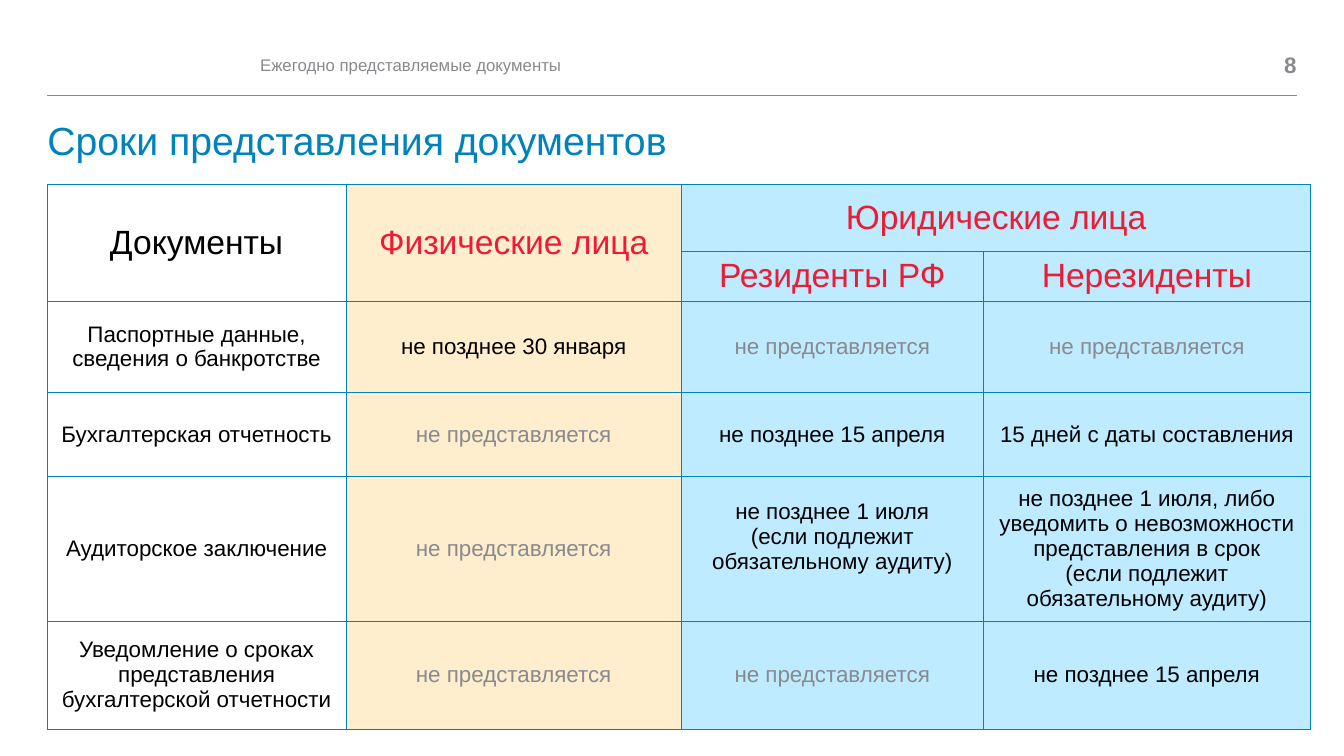
from lxml import etree
from pptx import Presentation
from pptx.dml.color import RGBColor
from pptx.enum.shapes import MSO_CONNECTOR
from pptx.enum.text import MSO_ANCHOR as ANCHOR, PP_ALIGN as ALIGN
from pptx.oxml.ns import qn
from pptx.util import Inches, Pt

FONT = "Arial"
BLUE = RGBColor(0x00, 0x82, 0xBB)
GREY = RGBColor(0x88, 0x8A, 0x8D)
RED = RGBColor(0xED, 0x1B, 0x34)
BLACK = RGBColor(0x00, 0x00, 0x00)
CREAM = RGBColor(0xFF, 0xEE, 0xCE)
SKY = RGBColor(0xBE, 0xEB, 0xFF)

COL_WIDTHS = [2.96, 3.33, 2.99, 3.25]
ROW_HEIGHTS = [0.66, 0.45, 0.9, 0.84, 1.3, 1.07]
COL_FILLS = [None, CREAM, SKY, SKY]
HEADER_ROWS = 2

NOT_REQUIRED = "не представляется"
IF_AUDITED = "(если подлежит обязательному аудиту)"
# A line break inside a cell starts a new paragraph
DEADLINES = [
    ["Документы", "Физические лица", "Юридические лица", ""],
    ["", "", "Резиденты РФ", "Нерезиденты"],
    ["Паспортные данные, сведения о банкротстве", "не позднее 30 января",
     NOT_REQUIRED, NOT_REQUIRED],
    ["Бухгалтерская отчетность", NOT_REQUIRED,
     "не позднее 15 апреля", "15 дней с даты составления"],
    ["Аудиторское заключение", NOT_REQUIRED,
     f"не позднее 1 июля\n{IF_AUDITED}",
     "не позднее 1 июля, либо уведомить о невозможности "
     f"представления в срок\n{IF_AUDITED}"],
    ["Уведомление о сроках представления бухгалтерской отчетности",
     NOT_REQUIRED, NOT_REQUIRED, "не позднее 15 апреля"],
]


def add_run(p, text, size, color, bold=False):
    r = p.add_run()
    r.text = text
    r.font.name = FONT
    r.font.size = Pt(size)
    r.font.bold = bold
    r.font.color.rgb = color


def add_text(slide, box, text, size, color, bold=False, align=ALIGN.LEFT,
             anchor=ANCHOR.MIDDLE, spacing=1.0):
    tf = slide.shapes.add_textbox(*map(Inches, box)).text_frame
    tf.word_wrap = True
    tf.vertical_anchor = anchor
    tf.margin_left = tf.margin_right = tf.margin_top = tf.margin_bottom = 0
    p = tf.paragraphs[0]
    p.alignment = align
    p.line_spacing = spacing
    add_run(p, text, size, color, bold)


def add_rule(slide, x1, x2, y):
    line = slide.shapes.add_connector(
        MSO_CONNECTOR.STRAIGHT, Inches(x1), Inches(y), Inches(x2), Inches(y))
    line.line.color.rgb = GREY
    line.line.width = Pt(0.5)
    etree.SubElement(line._element.spPr, qn("a:effectLst"))


def set_borders(cell, color, width):
    tc_pr = cell._tc.get_or_add_tcPr()
    for side in ("a:lnL", "a:lnR", "a:lnT", "a:lnB"):
        ln = etree.SubElement(tc_pr, qn(side), w=str(Pt(width)))
        fill = etree.SubElement(ln, qn("a:solidFill"))
        etree.SubElement(fill, qn("a:srgbClr"), val=str(color))


def fill_cell(cell, text, row, col):
    set_borders(cell, BLUE, 0.5)
    if COL_FILLS[col] is None:
        cell.fill.background()
    else:
        cell.fill.solid()
        cell.fill.fore_color.rgb = COL_FILLS[col]
    cell.vertical_anchor = ANCHOR.MIDDLE
    if col < 2:
        cell.margin_left = cell.margin_right = 0
        cell.margin_top = cell.margin_bottom = 0
    if not text:
        return
    header = row < HEADER_ROWS
    if header:
        color = RED if col else BLACK
    else:
        color = GREY if text == NOT_REQUIRED else BLACK
    tf = cell.text_frame
    for i, line in enumerate(text.split("\n")):
        p = tf.add_paragraph() if i else tf.paragraphs[0]
        p.alignment = ALIGN.CENTER
        add_run(p, line, 24 if header else 16, color)


def add_deadlines(slide, left, top):
    table = slide.shapes.add_table(
        len(ROW_HEIGHTS), len(COL_WIDTHS), Inches(left), Inches(top),
        Inches(sum(COL_WIDTHS)), Inches(sum(ROW_HEIGHTS))).table
    table.first_row = table.horz_banding = False
    for column, width in zip(table.columns, COL_WIDTHS):
        column.width = Inches(width)
    for row, height in zip(table.rows, ROW_HEIGHTS):
        row.height = Inches(height)
    for i, texts in enumerate(DEADLINES):
        for j, text in enumerate(texts):
            fill_cell(table.cell(i, j), text, i, j)
    # Two-level header
    table.cell(0, 0).merge(table.cell(1, 0))
    table.cell(0, 1).merge(table.cell(1, 1))
    table.cell(0, 2).merge(table.cell(0, 3))
    # The residents' audit deadline sits a little above the middle
    table.cell(4, 2).margin_bottom = Inches(0.3)


def main():
    prs = Presentation()
    prs.slide_width, prs.slide_height = Inches(13.33), Inches(7.5)
    s = prs.slides.add_slide(prs.slide_layouts[6])

    # Page header
    add_rule(s, 0.47, 12.86, 0.95)
    add_text(s, (2.58, 0.47, 9.23, 0.35),
             "Ежегодно представляемые документы", 12, GREY)
    add_text(s, (12.05, 0.47, 0.81, 0.35), "8", 16, GREY,
             bold=True, align=ALIGN.RIGHT)

    # Title and table
    add_text(s, (0.47, 1.21, 12.39, 0.66), "Сроки представления документов",
             28, BLUE, anchor=ANCHOR.TOP, spacing=0.9)
    add_deadlines(s, 0.47, 1.83)

    prs.save("out.pptx")


if __name__ == "__main__":
    main()
